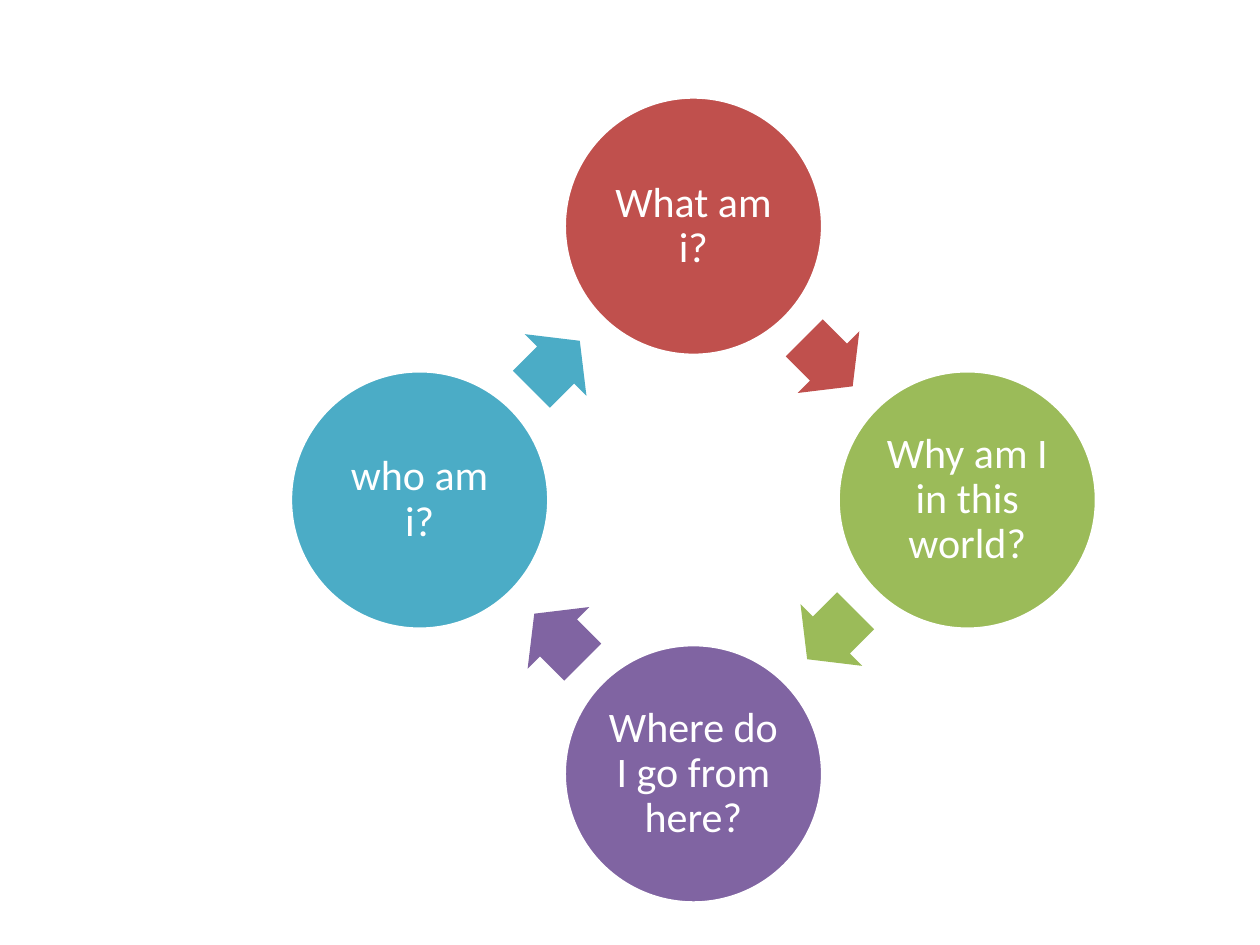
from math import cos, radians, sin

from pptx import Presentation
from pptx.dml.color import RGBColor
from pptx.enum.shapes import MSO_SHAPE as Shape
from pptx.enum.text import MSO_ANCHOR as Anchor, PP_ALIGN as Align
from pptx.util import Cm, Pt


def rgb(value):
    return RGBColor.from_string(value)


def apply(target, values):
    for name, value in values.items():
        setattr(target, name, value)


class CycleSlide:
    white = "FFFFFF"
    font = {"name": "Calibri", "size": Pt(24)}
    paragraph = {"alignment": Align.CENTER, "line_spacing": 0.9}
    frame = {
        "word_wrap": True,
        "vertical_anchor": Anchor.MIDDLE,
        "margin_left": Cm(0.08),
        "margin_right": Cm(0.08),
        "margin_top": Cm(0.08),
        "margin_bottom": Cm(0.08),
    }

    def __init__(self, prs):
        self.s = prs.slides.add_slide(prs.slide_layouts[6])

    def shape(self, kind, x, y, width, height, color):
        sp = self.s.shapes.add_shape(
            kind, Cm(x - width / 2), Cm(y - height / 2), Cm(width), Cm(height))
        sp.shadow.inherit = False
        sp.fill.solid()
        sp.fill.fore_color.rgb = rgb(color)
        return sp

    def circle(self, x, y, diameter, color, text):
        sp = self.shape(Shape.OVAL, x, y, diameter, diameter, color)
        sp.line.color.rgb = rgb(self.white)
        sp.line.width = Pt(2)
        tf = sp.text_frame
        apply(tf, self.frame)
        p = tf.paragraphs[0]
        apply(p, self.paragraph)
        r = p.add_run()
        r.text = text
        apply(r.font, self.font)
        r.font.color.rgb = rgb(self.white)

    def arrow(self, x, y, width, height, color, rotation):
        sp = self.shape(Shape.RIGHT_ARROW, x, y, width, height, color)
        sp.line.fill.background()
        sp.adjustments[0] = 0.6
        sp.adjustments[1] = 0.5
        sp.rotation = rotation


def main():
    prs = Presentation()
    prs.slide_width, prs.slide_height = Cm(25.4), Cm(19.05)
    cycle = CycleSlide(prs)

    questions = [
        ("What am i?", "C0504D"),
        ("Why am I in this world?", "9BBB59"),
        ("Where do I go from here?", "8064A2"),
        ("who am i?", "4BACC6"),
    ]
    center_x, center_y = 13.98, 10.08
    radius, diameter = 5.52, 5.21
    arrow_radius, arrow_lag = 3.89, 0.6
    step = 360 / len(questions)

    def on_ring(distance, angle):
        a = radians(angle)
        return center_x + distance * sin(a), center_y - distance * cos(a)

    for i, (text, color) in enumerate(questions):
        angle = i * step
        halfway = angle + step / 2
        cycle.circle(*on_ring(radius, angle), diameter, color, text)
        cycle.arrow(*on_ring(arrow_radius, halfway - arrow_lag),
                    1.38, 1.76, color, halfway)

    prs.save("out.pptx")


if __name__ == "__main__":
    main()
